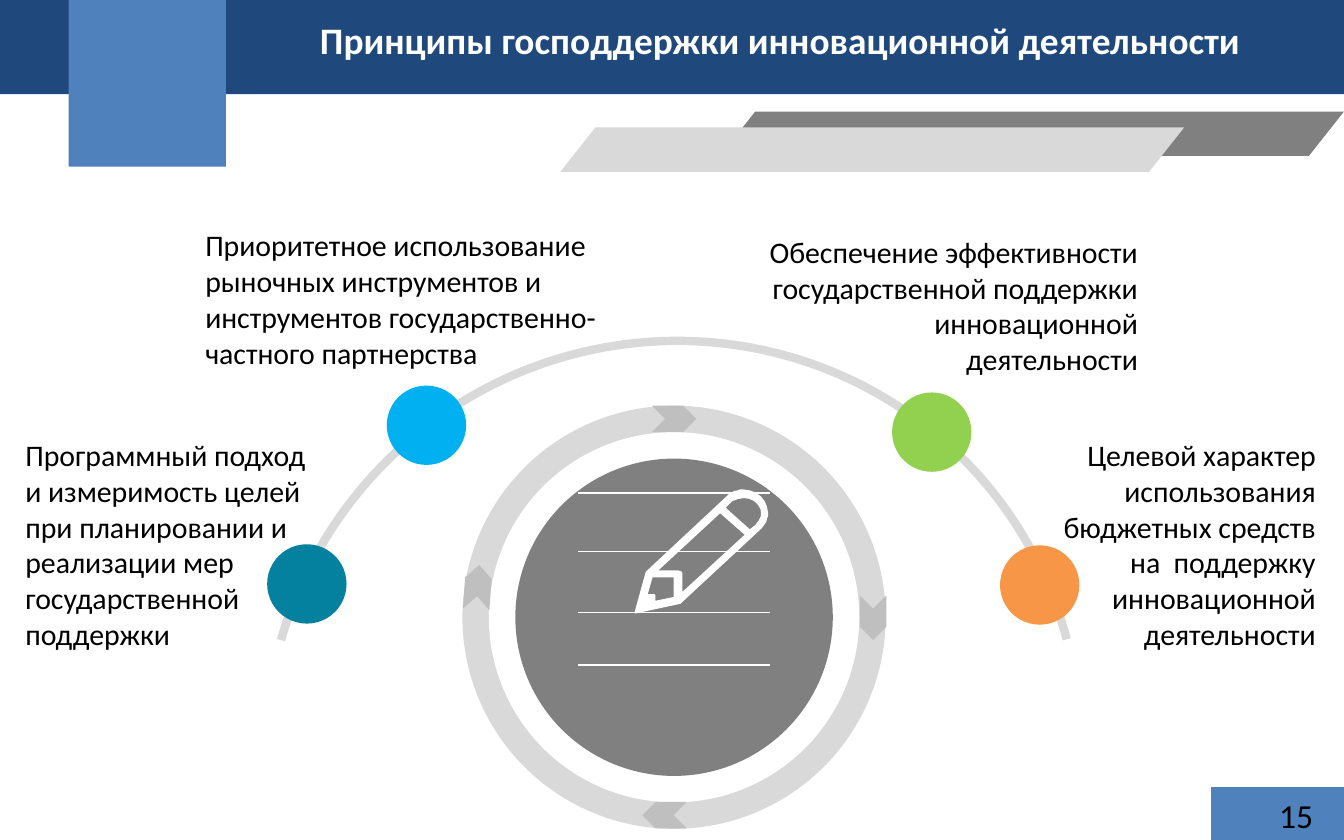
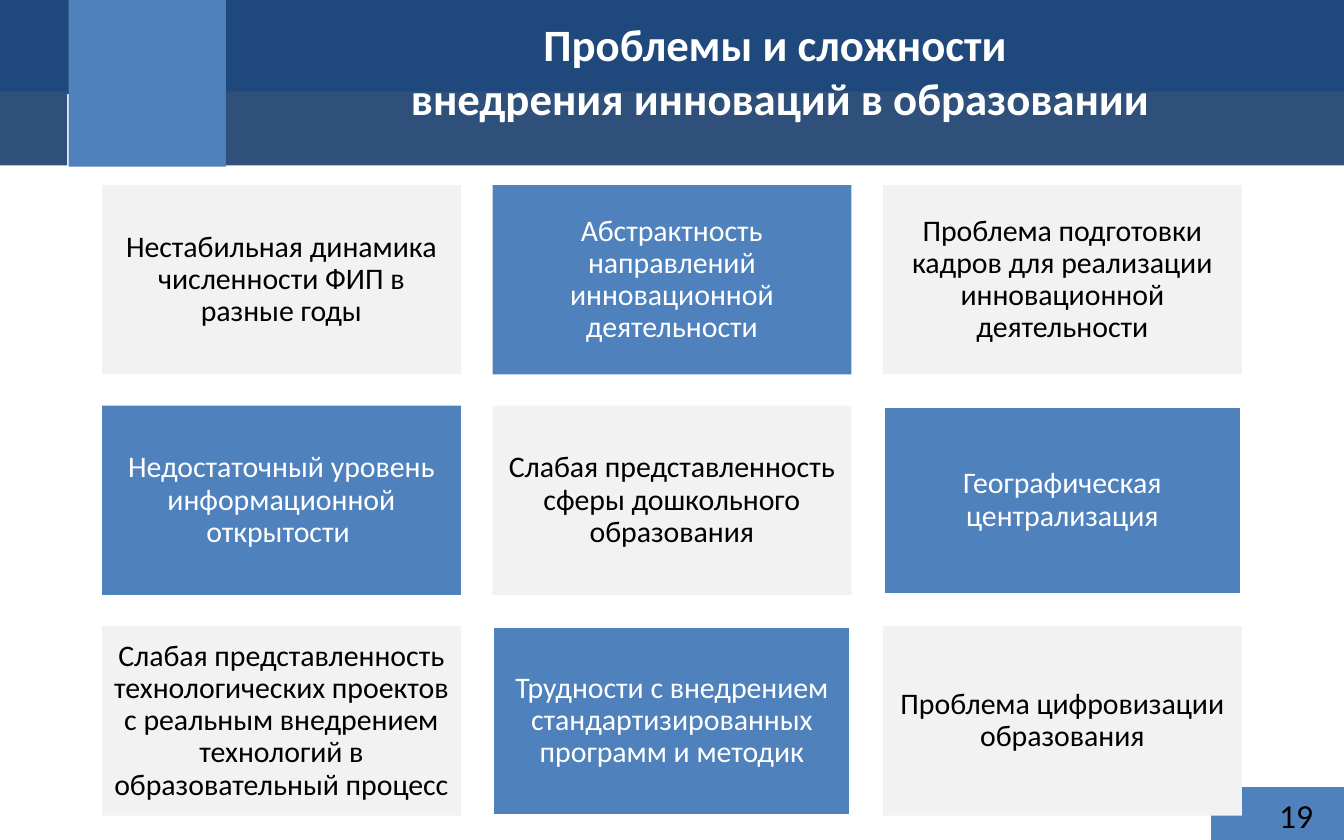
import lxml.etree
import pptx
import pptx.dml.color
import pptx.enum.shapes
import pptx.enum.text
import pptx.oxml.ns
import pptx.util

Cm = pptx.util.Cm
Pt = pptx.util.Pt
RGBColor = pptx.dml.color.RGBColor
Kind = pptx.enum.shapes.MSO_SHAPE
Align = pptx.enum.text.PP_ALIGN
Anchor = pptx.enum.text.MSO_ANCHOR

NAVY = RGBColor(0x1F, 0x49, 0x7D)
SLATE = RGBColor(0x2E, 0x50, 0x7A)
BLUE = RGBColor(0x4F, 0x81, 0xBD)
TEAL = RGBColor(0x04, 0x81, 0x9E)
SKY = RGBColor(0x00, 0xB0, 0xF0)
GREEN = RGBColor(0x92, 0xD0, 0x50)
ORANGE = RGBColor(0xF7, 0x96, 0x46)
GRAY = RGBColor(0x80, 0x80, 0x80)
SILVER = RGBColor(0xBF, 0xBF, 0xBF)
LIGHT = RGBColor(0xD9, 0xD9, 0xD9)
PALE = RGBColor(0xF2, 0xF2, 0xF2)
WHITE = RGBColor(0xFF, 0xFF, 0xFF)
BLACK = RGBColor(0, 0, 0)

PENCIL = [
    [(1374, 940), (1222, 1082), (1201, 1158), (1285, 1140), (1438, 998),
     (1445, 991, 1450, 980, 1450, 970), (1450, 947, 1430, 927, 1405, 927),
     (1394, 927, 1382, 932, 1374, 940)],
    [(1430, 993), (1417, 1003), (1369, 960), (1382, 947),
     (1382, 947, 1392, 940, 1405, 940), (1425, 940, 1440, 953, 1440, 970),
     (1440, 978, 1435, 986, 1430, 993)],
    [(1288, 1123), (1288, 1085), (1288, 1082, 1285, 1080, 1280, 1080),
     (1240, 1080), (1361, 968), (1410, 1011)],
    [(1275, 1130), (1237, 1138), (1237, 1125), (1222, 1125), (1232, 1090),
     (1275, 1090)],
]

AIMS = [
    ("Программный подход и измеримость целей при планировании и реализации мер "
     "государственной поддержки", (0.23, 8.13, 5.89, 4.37), Align.LEFT),
    ("Приоритетное использование рыночных инструментов и инструментов "
     "государственно-частного партнерства", (3.63, 4.17, 8.92, 3), Align.LEFT),
    ("Обеспечение эффективности государственной поддержки инновационной "
     "деятельности", (14.17, 4.29, 7.59, 3), Align.RIGHT),
    ("Целевой характер использования бюджетных средств на  поддержку "
     "инновационной деятельности", (19.28, 8.13, 5.84, 4.37), Align.RIGHT),
]

ISSUES = [
    "Нестабильная динамика численности ФИП в разные годы",
    "Абстрактность направлений инновационной деятельности",
    "Проблема подготовки кадров для реализации инновационной деятельности",
    "Недостаточный уровень информационной открытости ",
    "Слабая представленность сферы дошкольного образования",
    "Географическая централизация",
    "Слабая представленность технологических проектов с реальным внедрением "
    "технологий в образовательный процесс",
    "Трудности с внедрением стандартизированных программ и методик",
    "Проблема цифровизации образования",
]
EDGED = (5, 7)


def put(frame, text, size=16, color=BLACK, bold=False, align=Align.LEFT,
        anchor=Anchor.TOP, space=None, inset=None):
    frame.word_wrap = True
    frame.vertical_anchor = anchor
    if inset is not None:
        frame.margin_left = frame.margin_right = Cm(inset)
        frame.margin_top = frame.margin_bottom = Cm(inset)
    for i, part in enumerate(text.split("\n")):
        para = frame.add_paragraph() if i else frame.paragraphs[0]
        para.alignment = align
        para.line_spacing = space
        run = para.add_run()
        run.text = part
        run.font.name = "Calibri"
        run.font.size = Pt(size)
        run.font.bold = bold
        run.font.color.rgb = color


def trace(steps, count=6):
    dots = [steps[0]]
    for step in steps[1:]:
        if len(step) == 2:
            dots.append(step)
            continue
        knots = [dots[-1], step[:2], step[2:4], step[4:]]
        for i in range(1, count + 1):
            t = i / count
            rates = ((1 - t) ** 3, 3 * t * (1 - t) ** 2,
                     3 * t * t * (1 - t), t ** 3)
            dots.append(tuple(sum(r * k[axis] for r, k in zip(rates, knots))
                              for axis in (0, 1)))
    return dots


class Deck:
    def __init__(self):
        self.file = pptx.Presentation()
        self.file.slide_width = Cm(25.4)
        self.file.slide_height = Cm(15.88)
        self.slide = None

    def start(self, number):
        self.slide = self.file.slides.add_slide(self.file.slide_layouts[6])
        self.shape((0, 0, 25.4, 1.78), NAVY)
        self.shape((1.3, 0, 2.97, 3.15), BLUE)
        self.shape((22.89, 14.88, 2.54, 1.02), BLUE)
        self.text((23.8, 14.99, 1.27, 0.84), number, size=18,
                  align=Align.RIGHT, anchor=Anchor.MIDDLE)

    def paint(self, item, fill=None, edge=None, width=1):
        item.shadow.inherit = False
        if fill is None:
            item.fill.background()
        else:
            item.fill.solid()
            item.fill.fore_color.rgb = fill
        if edge is None:
            item.line.fill.background()
        else:
            item.line.color.rgb = edge
            item.line.width = Pt(width)

    def shape(self, box, fill=None, kind=Kind.RECTANGLE, turn=0, adjust=(),
              **edge):
        item = self.slide.shapes.add_shape(kind, *map(Cm, box))
        for i, value in enumerate(adjust):
            item.adjustments[i] = value
        item.rotation = turn
        self.paint(item, fill, **edge)
        return item

    def disc(self, x, y, size, fill):
        self.shape((x - size / 2, y - size / 2, size, size), fill,
                   Kind.FLOWCHART_CONNECTOR)

    def text(self, box, text, **style):
        item = self.slide.shapes.add_textbox(*map(Cm, box))
        put(item.text_frame, text, **style)

    def title(self, text, size, height):
        self.text((4.09, 0.2, 21.31, height), text, size=size, color=WHITE,
                  bold=True, align=Align.CENTER)

    def line(self, x1, y1, x2, y2, color, width):
        item = self.slide.shapes.add_connector(
            pptx.enum.shapes.MSO_CONNECTOR.STRAIGHT, *map(Cm, (x1, y1, x2, y2)))
        item.line.color.rgb = color
        item.line.width = Pt(width)
        lxml.etree.SubElement(item._element.spPr,
                              pptx.oxml.ns.qn("a:effectLst"))

    def outline(self, loops, fill, **edge):
        pen = None
        for dots in map(trace, loops):
            if pen is None:
                pen = self.slide.shapes.build_freeform(*dots[0], scale=Cm(0.01))
            else:
                pen.move_to(*dots[0])
            pen.add_line_segments(dots[1:], close=True)
        self.paint(pen.convert_to_shape(), fill, **edge)


def draw_aims(deck):
    deck.start("15")
    deck.title("Принципы господдержки инновационной деятельности", 20, 1.12)
    for size, fill in ((8, LIGHT), (7, WHITE), (6, GRAY)):
        deck.disc(12.74, 11.67, size, fill)
    for x, y, turn in ((12.32, 7.67, 0), (12.14, 15.16, 180),
                       (16.08, 11.43, 90), (8.61, 10.85, 274)):
        deck.shape((x, y, 0.84, 0.5), SILVER, Kind.CHEVRON, turn)
    deck.shape((4.98, 6.48, 15.47, 15.29), kind=Kind.ARC, turn=321,
               adjust=(140.57, 14.21), edge=LIGHT, width=4.5)
    for x, y, fill in ((5.8, 11.04, TEAL), (8.06, 8.04, SKY),
                       (19.65, 11.06, ORANGE), (17.61, 8.17, GREEN)):
        deck.disc(x, y, 1.5, fill)
    deck.outline(PENCIL, WHITE, edge=WHITE)
    for y in (9.32, 10.43, 11.58, 12.57):
        deck.line(10.93, y, 14.55, y, WHITE, 0.75)
    for text, box, align in AIMS:
        deck.text(box, text, align=align)
    for x, y, fill in ((13.61, 2.11, GRAY), (10.59, 2.41, LIGHT)):
        deck.shape((x, y, 11.79, 0.84), fill, Kind.PARALLELOGRAM,
                   adjust=(0.79,))


def draw_issues(deck):
    deck.start("19")
    for x, width in ((4.27, 21.13), (0, 1.27)):
        deck.shape((x, 1.73, width, 1.4), SLATE)
    deck.title("Проблемы и сложности \nвнедрения инноваций в образовании",
               24, 2.31)
    for i, text in enumerate(ISSUES):
        row, col = divmod(i, 3)
        fill, color = ((BLUE, WHITE) if i % 2 else (PALE, BLACK))
        cell = deck.shape((1.93 + 7.38 * col, 3.5 + 4.17 * row, 6.78, 3.58),
                          fill, edge=WHITE if i in EDGED else None, width=2)
        put(cell.text_frame, text, color=color, align=Align.CENTER,
            anchor=Anchor.MIDDLE, space=0.9, inset=0.18)


def main():
    deck = Deck()
    draw_aims(deck)
    draw_issues(deck)
    deck.file.save("out.pptx")


if __name__ == "__main__":
    main()
